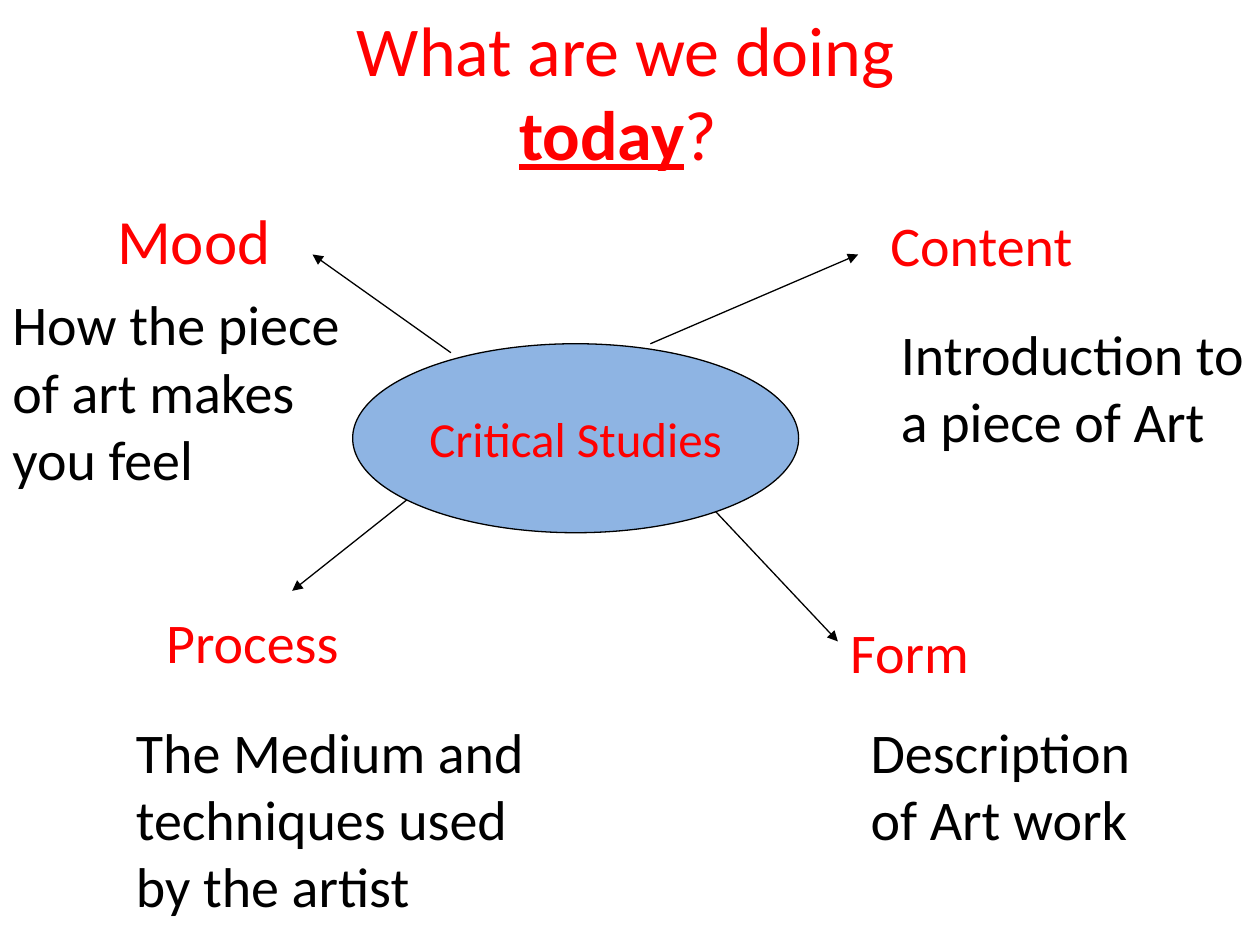
import pptx
import pptx.dml.color
import pptx.enum.shapes
import pptx.enum.text
import pptx.oxml.ns
import pptx.util
from lxml import etree

Cm = pptx.util.Cm
RED = pptx.dml.color.RGBColor(0xFF, 0x00, 0x00)
BLACK = pptx.dml.color.RGBColor(0x00, 0x00, 0x00)
BLUE = pptx.dml.color.RGBColor(0x8E, 0xB4, 0xE3)
CENTER = pptx.enum.text.PP_ALIGN.CENTER


class SlideBuilder:
    """Holds the style and the slide being filled."""

    font_name = "Calibri"
    line_width = pptx.util.Pt(0.75)

    def __init__(self, slide):
        self.slide = slide

    def add_run(self, paragraph, text, size, color, emphasis=False):
        run = paragraph.add_run()
        run.text = text
        run.font.name = self.font_name
        run.font.size = pptx.util.Pt(size)
        run.font.color.rgb = color
        run.font.bold = emphasis
        run.font.underline = emphasis

    def add_text(self, box, runs, size, color, alignment=None):
        """Add a wrapped text box; runs are (text, emphasis) pairs."""
        shape = self.slide.shapes.add_textbox(*map(Cm, box))
        shape.text_frame.word_wrap = True
        shape.text_frame.auto_size = pptx.enum.text.MSO_AUTO_SIZE.SHAPE_TO_FIT_TEXT
        paragraph = shape.text_frame.paragraphs[0]
        paragraph.alignment = alignment
        for text, emphasis in runs:
            self.add_run(paragraph, text, size, color, emphasis)

    def add_arrow(self, start, end):
        connector = self.slide.shapes.add_connector(
            pptx.enum.shapes.MSO_CONNECTOR.STRAIGHT, *map(Cm, start + end))
        connector.line.color.rgb = BLACK
        connector.line.width = self.line_width
        qualified = pptx.oxml.ns.qn
        line = connector.line._get_or_add_ln()
        etree.SubElement(line, qualified("a:tailEnd"), type="triangle")
        etree.SubElement(connector._element.spPr, qualified("a:effectLst"))

    def add_ellipse(self, box, text, size):
        shape = self.slide.shapes.add_shape(
            pptx.enum.shapes.MSO_SHAPE.OVAL, *map(Cm, box))
        shape.shadow.inherit = False
        shape.fill.solid()
        shape.fill.fore_color.rgb = BLUE
        shape.line.color.rgb = BLACK
        shape.line.width = self.line_width
        shape.text_frame.word_wrap = False
        shape.text_frame.vertical_anchor = pptx.enum.text.MSO_ANCHOR.MIDDLE
        paragraph = shape.text_frame.paragraphs[0]
        paragraph.alignment = CENTER
        self.add_run(paragraph, text, size, RED)


# Topics: heading, size, box
HEADINGS = [
    ("Content", 32, (17.7, 4.11, 5.79, 1.63)),
    ("Form", 32, (16.89, 12.32, 5.99, 1.63)),
    ("Mood", 36, (2.11, 3.94, 3.99, 1.8)),
    ("Process", 32, (3.1, 12.12, 4.8, 1.63)),
]
EXPLANATIONS = [
    ("Introduction to a piece of Art", (17.91, 6.32, 7.49, 3)),
    ("Description of Art work", (17.3, 14.33, 6.4, 3)),
    ("The Medium and techniques used by the artist", (2.49, 14.33, 8.79, 4.37)),
    ("How the piece of art makes you feel", (0, 5.72, 7.9, 4.37)),
]
# Arrows from the centre to each topic
ARROWS = [
    ((13.11, 6.93), (17.3, 5.13)),
    ((13.69, 9.53), (16.89, 12.93)),
    ((8.89, 9.53), (5.89, 11.91)),
    ((9.09, 7.11), (6.3, 5.13)),
]


def main():
    presentation = pptx.Presentation()
    presentation.slide_width = Cm(25.4)
    presentation.slide_height = Cm(19.05)
    builder = SlideBuilder(
        presentation.slides.add_slide(presentation.slide_layouts[6]))

    # Topics and their explanations
    for text, size, box in HEADINGS:
        builder.add_text(box, [(text, False)], size, RED)
    for text, box in EXPLANATIONS:
        builder.add_text(box, [(text, False)], 32, BLACK)

    # Central idea, drawn over the arrow starts
    for start, end in ARROWS:
        builder.add_arrow(start, end)
    builder.add_ellipse((7.11, 6.93, 8.99, 3.81), "Critical Studies", 28)

    # Title
    title = [("What are we doing ", False), ("today", True), ("? ", False)]
    builder.add_text((5.11, 0, 15.01, 3.68), title, 40, RED, CENTER)

    presentation.save("out.pptx")


if __name__ == "__main__":
    main()
